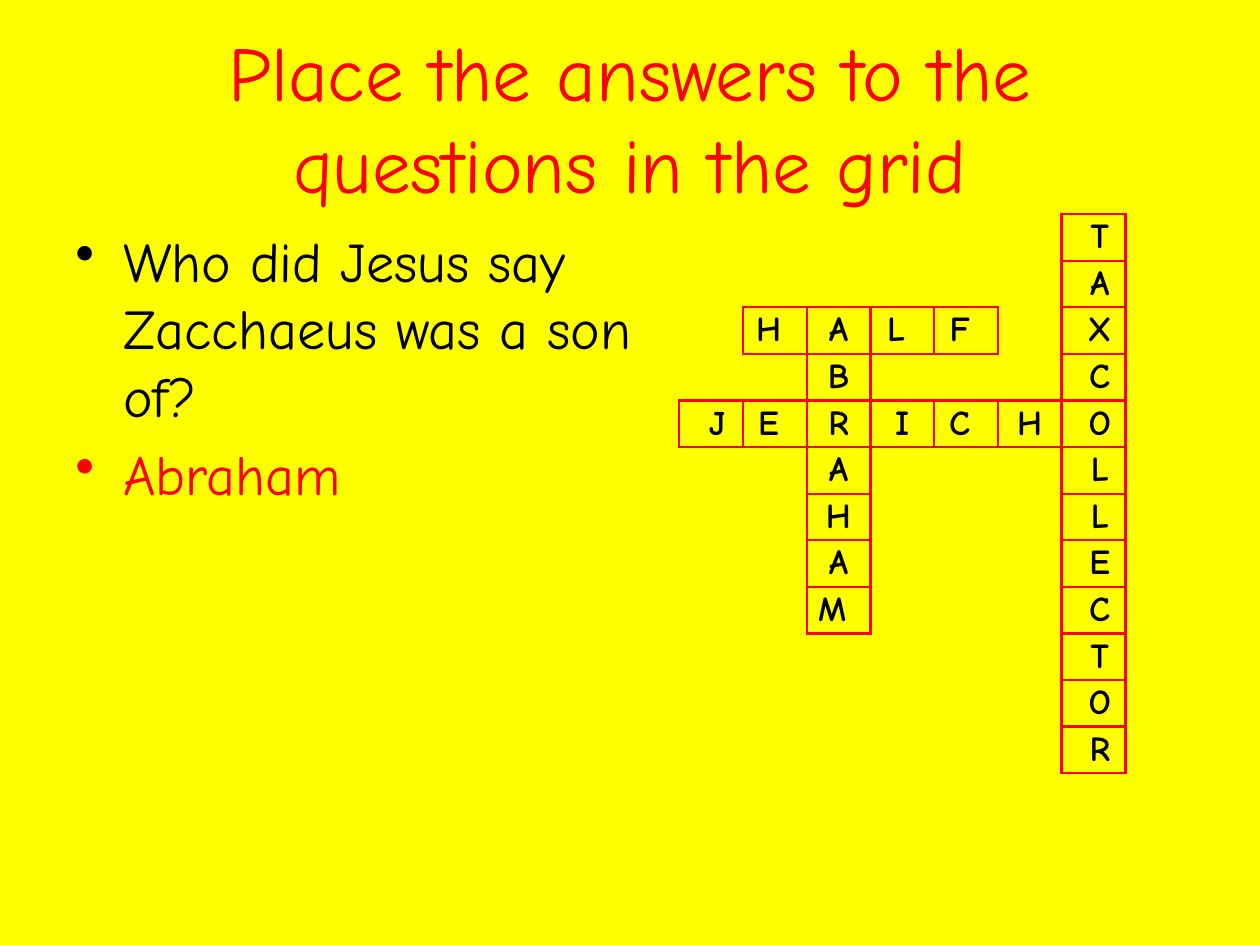
from lxml import etree
from pptx import Presentation
from pptx.dml.color import RGBColor
from pptx.enum.text import MSO_ANCHOR, PP_ALIGN
from pptx.oxml.ns import qn
from pptx.util import Inches, Pt

CENTER = PP_ALIGN.CENTER
LEFT = PP_ALIGN.LEFT
TOP = MSO_ANCHOR.TOP
MIDDLE = MSO_ANCHOR.MIDDLE
COLORS = {"background": "FFFF00", "accent": "FF0000", "text": "000000"}
FONT = "Comic Neue"
NBSP = chr(160)
ROWS, COLS = 12, 7
ACROSS = [("HALF", 2, 1), ("JERICHO", 4, 0)]
DOWN = [("TAXCOLLECTOR", 0, 6), ("ABRAHAM", 2, 2)]
LEADING_SPACE_COLS = {0, 6}
TRAILING_SPACE_CELLS = {(2, 1), (2, 3), (2, 4), (4, 1), (4, 4), (8, 2)}
SIDES = {"a:lnL": (0, -1), "a:lnR": (0, 1), "a:lnT": (-1, 0), "a:lnB": (1, 0)}


def crossword_letters():
    letters = {}
    for word, row, col in ACROSS:
        letters.update({(row, col + i): ch for i, ch in enumerate(word)})
    for word, row, col in DOWN:
        letters.update({(row + i, col): ch for i, ch in enumerate(word)})
    return letters


def padded(letter, pos):
    if pos[1] in LEADING_SPACE_COLS:
        return NBSP + letter
    return letter + NBSP if pos in TRAILING_SPACE_CELLS else letter


class SlideBuilder:
    def __init__(self, slide):
        self.s = slide
        fill = slide.background.fill
        fill.solid()
        fill.fore_color.rgb = RGBColor.from_string(COLORS["background"])

    def style(self, p, size, color, align=LEFT, bold=False):
        p.alignment = align
        p.font.name = FONT
        p.font.size = Pt(size)
        p.font.bold = bold
        p.font.color.rgb = RGBColor.from_string(COLORS[color])

    def text_box(self, left, top, width, height, anchor):
        sp = self.s.shapes.add_textbox(Inches(left), Inches(top), Inches(width), Inches(height))
        tf = sp.text_frame
        tf.word_wrap = True
        tf.vertical_anchor = anchor
        return tf

    def title(self, text, *box):
        p = self.text_box(*box, MIDDLE).paragraphs[0]
        p.text = text
        self.style(p, 44, "accent", CENTER)

    def bullets(self, items, *box):
        tf = self.text_box(*box, TOP)
        for i, (text, color) in enumerate(items):
            p = tf.add_paragraph() if i else tf.paragraphs[0]
            p.text = text
            p.space_before = Pt(6.4)
            self.style(p, 32, color)
            pPr = p._p.get_or_add_pPr()
            pPr.set("marL", str(Inches(0.38)))
            pPr.set("indent", str(-Inches(0.38)))
            bullet = etree.Element(qn("a:buChar"), char="•")
            pPr.find(qn("a:defRPr")).addprevious(bullet)

    def border(self, cell, side, visible):
        tcPr = cell._tc.get_or_add_tcPr()
        ln = etree.SubElement(tcPr, qn(side), w=str(Pt(1.5)))
        if visible:
            fill = etree.SubElement(ln, qn("a:solidFill"))
            etree.SubElement(fill, qn("a:srgbClr"), val=COLORS["accent"])
        else:
            etree.SubElement(ln, qn("a:noFill"))

    def crossword(self, letters, left, top, cell_width, cell_height):
        table = self.s.shapes.add_table(
            ROWS, COLS, Inches(left), Inches(top),
            Inches(cell_width * COLS), Inches(cell_height * ROWS)).table
        table.first_row = False
        table.horz_banding = False
        for row in range(ROWS):
            for col in range(COLS):
                pos = (row, col)
                cell = table.cell(row, col)
                cell.margin_left = cell.margin_right = 0
                cell.margin_top = cell.margin_bottom = 0
                cell.vertical_anchor = MIDDLE
                for side, (dr, dc) in SIDES.items():
                    neighbour = (row + dr, col + dc)
                    self.border(cell, side, pos in letters or neighbour in letters)
                cell.fill.background()
                if pos in letters:
                    p = cell.text_frame.paragraphs[0]
                    p.text = padded(letters[pos], pos)
                    self.style(p, 20, "text", CENTER, True)


def main():
    prs = Presentation()
    prs.slide_width = Inches(10)
    prs.slide_height = Inches(7.5)
    builder = SlideBuilder(prs.slides.add_slide(prs.slide_layouts[6]))
    builder.title("Place the answers to the questions in the grid", 0.5, 0.3, 9, 1.25)
    builder.bullets([("Who did Jesus say Zacchaeus was a son of?", "text"),
                     ("Abraham", "accent")], 0.5, 1.75, 5.05, 4.95)
    builder.crossword(crossword_letters(), 5.39, 1.7, 0.506, 0.37)
    prs.save("out.pptx")


if __name__ == "__main__":
    main()
